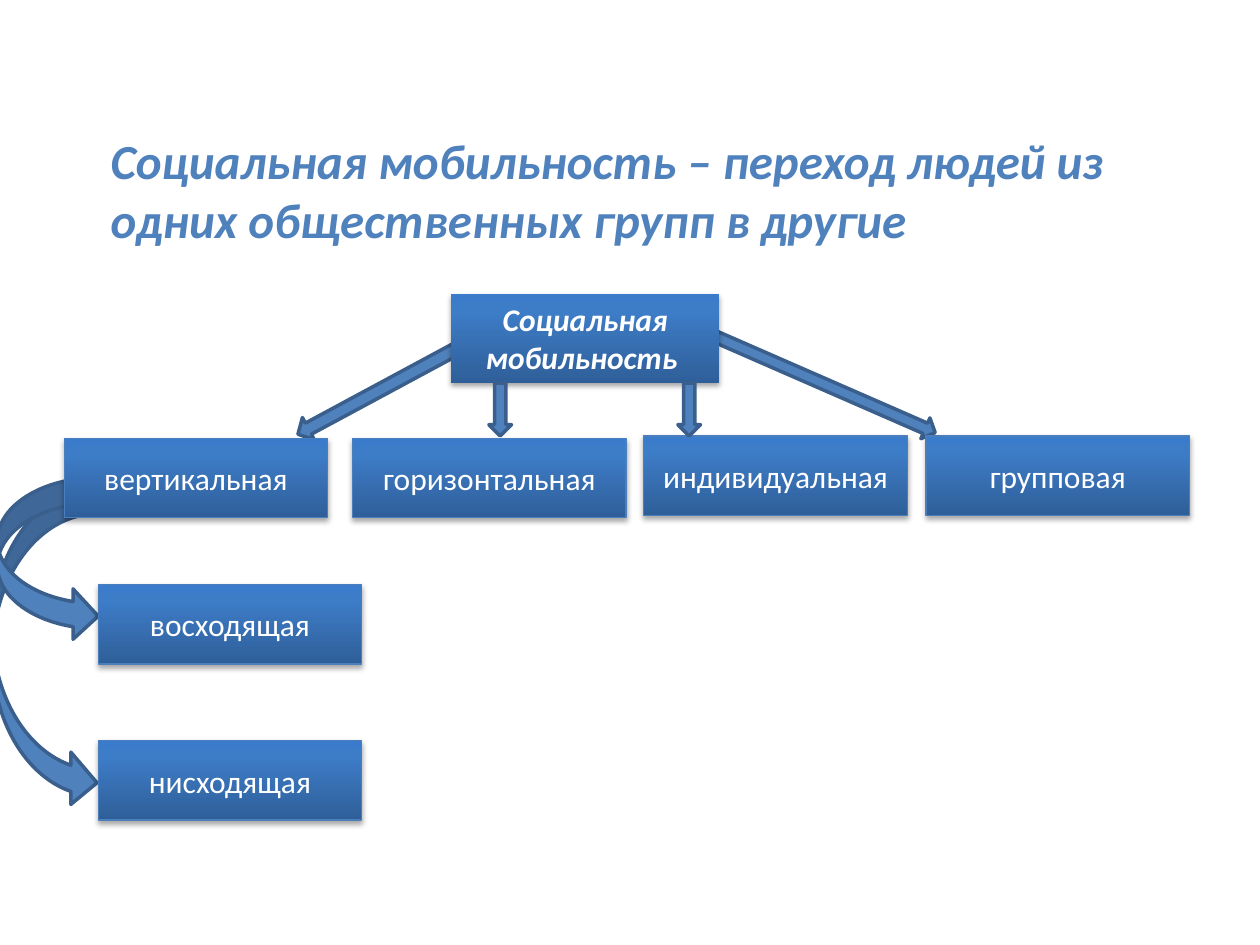
from typing import NamedTuple

from lxml.etree import SubElement
from pptx import Presentation
from pptx.dml.color import RGBColor as Rgb
from pptx.enum.shapes import MSO_SHAPE as Shape
from pptx.enum.text import MSO_ANCHOR as Anchor, MSO_AUTO_SIZE as Fit, PP_ALIGN as Align
from pptx.oxml.ns import qn
from pptx.util import Inches, Pt

COLS, ROWS = 100, 75
BLUE, EDGE, RIM, WHITE = "4F81BD", "3A5F8C", "4B7EBC", "FFFFFF"
STOPS = [(0, "2F5F99"), (80, "3D7CC7"), (100, "3A7CCB")]
WIDE, TALL = 20.9, 6.3

deck = Presentation()
deck.slide_width, deck.slide_height = Inches(10), Inches(7.5)
slide = deck.slides.add_slide(deck.slide_layouts[6])


class Area(NamedTuple):
    """A place on the grid, in columns and rows."""
    col: float
    row: float
    wide: float
    tall: float

    def place(self) -> list[int]:
        x, y = deck.slide_width / COLS, deck.slide_height / ROWS
        return [round(n) for n in
                (self.col * x, self.row * y, self.wide * x, self.tall * y)]


class Arrow(NamedTuple):
    area: Area
    kind: Shape = Shape.DOWN_ARROW
    turn: float = 0
    head: float = 0.5


class Box(NamedTuple):
    text: str
    area: Area
    root: bool = False


def paint(part, code: str) -> None:
    """Give a fill or a line one solid colour."""
    part.solid()
    part.fore_color.rgb = Rgb.from_string(code)


def write(frame, text: str, size: int, code: str, strong: bool) -> None:
    frame.word_wrap = True
    run = frame.paragraphs[0].add_run()
    run.text = text
    font = run.font
    font.name, font.size = "Calibri", Pt(size)
    font.bold = font.italic = strong
    paint(font.fill, code)


def draw_arrow(arrow: Arrow) -> None:
    item = slide.shapes.add_shape(arrow.kind, *arrow.area.place())
    item.shadow.inherit = False
    item.rotation = arrow.turn
    if arrow.kind == Shape.DOWN_ARROW:
        item.adjustments[1] = arrow.head
    paint(item.fill, BLUE)
    paint(item.line.fill, EDGE)
    item.line.width = Pt(2)


def shade(item) -> None:
    """Add the upward gradient and the soft shadow below."""
    item.fill.gradient()
    item.fill.gradient_angle = 90
    props = item._element.spPr
    stops = props.find(".//" + qn("a:gsLst"))
    for old in list(stops):
        stops.remove(old)
    for share, code in STOPS:
        stop = SubElement(stops, qn("a:gs"), pos=str(share * 1000))
        SubElement(stop, qn("a:srgbClr"), val=code)
    item.shadow.inherit = False
    cast = SubElement(props.find(qn("a:effectLst")), qn("a:outerShdw"),
                      blurRad=str(Pt(3.1)), dist=str(Pt(1.8)),
                      dir="5400000", rotWithShape="0")
    tint = SubElement(cast, qn("a:srgbClr"), val="000000")
    SubElement(tint, qn("a:alpha"), val="35000")


def draw_box(box: Box) -> None:
    item = slide.shapes.add_shape(Shape.RECTANGLE, *box.area.place())
    if box.root:
        item.line.fill.background()
    else:
        paint(item.line.fill, RIM)
        item.line.width = Pt(0.75)
    shade(item)
    frame = item.text_frame
    frame.vertical_anchor = Anchor.TOP if box.root else Anchor.MIDDLE
    frame.paragraphs[0].alignment = Align.CENTER
    write(frame, box.text, 18, WHITE, box.root)


def draw_title(text: str, area: Area) -> None:
    frame = slide.shapes.add_textbox(*area.place()).text_frame
    frame.auto_size = Fit.SHAPE_TO_FIT_TEXT
    write(frame, text, 28, BLUE, True)


BACK = [
    Arrow(Area(64.2, 20.4, 1.8, 19.9), turn=293.6, head=0.47),
    Arrow(Area(28.9, 24, 2, 14.2), turn=61.7, head=0.47),
    Arrow(Area(-0.6, 38.7, 8.3, 25.5), Shape.CURVED_RIGHT_ARROW),
    Arrow(Area(-0.2, 37.9, 8, 13), Shape.CURVED_RIGHT_ARROW),
]
FRONT = [Arrow(Area(col, 30.4, 1.8, 4.2)) for col in (38.8, 53.8)]
BOXES = [
    Box("Социальная мобильность ", Area(35.8, 23.3, 21.3, 7.1), root=True),
    Box("вертикальная", Area(5.1, 34.8, WIDE, TALL)),
    Box("горизонтальная", Area(28, 34.8, 21.7, TALL)),
    Box("групповая", Area(73.5, 34.6, WIDE, TALL)),
    Box("индивидуальная", Area(51.1, 34.6, WIDE, TALL)),
    Box("восходящая", Area(7.8, 46.4, WIDE, TALL)),
    Box("нисходящая", Area(7.8, 58.8, WIDE, TALL)),
]

for arrow in BACK:
    draw_arrow(arrow)
draw_title("Социальная мобильность – переход людей из одних общественных групп в другие",
           Area(7.8, 9.9, 86.6, 15.2))
for box in BOXES:
    draw_box(box)
for arrow in FRONT:
    draw_arrow(arrow)

deck.save("out.pptx")
